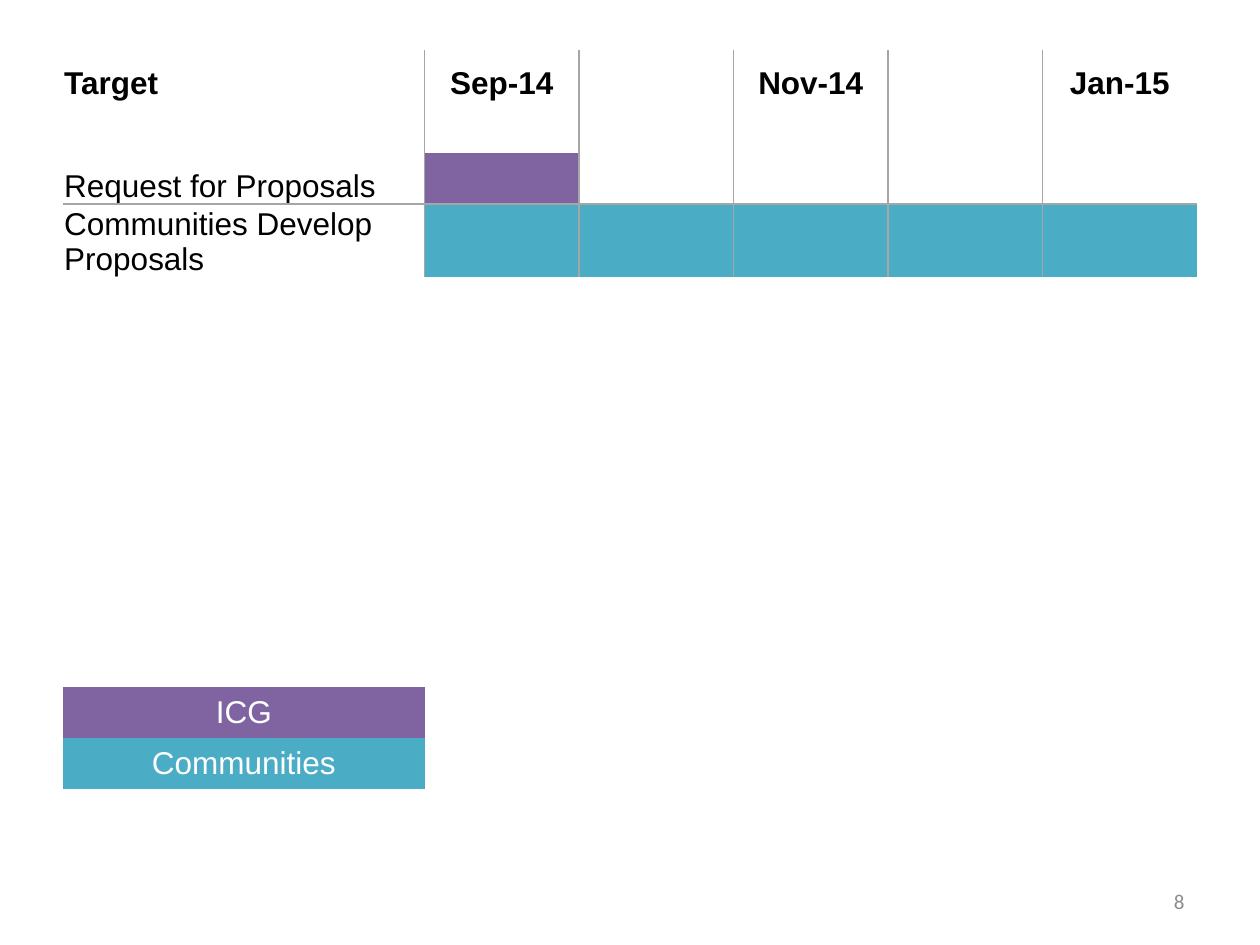
from lxml.etree import SubElement
from pptx import Presentation
from pptx.dml.color import RGBColor
from pptx.enum.text import MSO_ANCHOR, PP_ALIGN
from pptx.oxml.ns import qn
from pptx.util import Inches, Pt

COLORS = {"icg": "8064A2", "communities": "4BACC6", "rule": "A6A6A6",
          "ink": "000000", "on_bar": "FFFFFF", "page": "8C8C8C"}
ROWS, MONTHS = 15, 5
LABEL_WIDTH, MONTH_WIDTH, ROW_HEIGHT = 2.87, 1.226, 6.1 / 15
LEFT, TOP = 0.5, 0.4
HEADERS = {0: "Target", 1: "Sep-14", 3: "Nov-14", 5: "Jan-15"}
# row: label, owner, first month, last month
TASKS = {2: ("Request for Proposals", "icg", 1, 1),
         3: ("Communities Develop Proposals", "communities", 1, MONTHS)}
LEGEND = {12: ("ICG", "icg"), 13: ("Communities", "communities")}
LAST_TASK_ROW = max(TASKS)
RULED_ROW = min(TASKS)


def add_run(paragraph, text, size, font, color, bold=False):
    run = paragraph.add_run()
    run.text = text
    run.font.size = Pt(size)
    run.font.name = font
    run.font.bold = bold
    run.font.color.rgb = RGBColor.from_string(COLORS[color])


def set_borders(cell, ruled_sides):
    """Draw a 1 pt rule on the given sides (L, R, T, B) and clear the others."""
    properties = cell._tc.get_or_add_tcPr()
    for side in "LRTB":
        line = SubElement(properties, qn(f"a:ln{side}"), w=str(Pt(1)))
        if side in ruled_sides:
            fill = SubElement(line, qn("a:solidFill"))
            SubElement(fill, qn("a:srgbClr"), val=COLORS["rule"])
        else:
            SubElement(line, qn("a:noFill"))


def ruled_sides(row, column):
    sides = ""
    if row <= LAST_TASK_ROW:
        sides += "L" if column > 0 else ""
        sides += "R" if column < MONTHS else ""
    if row == RULED_ROW:
        sides += "B"
    if row == RULED_ROW + 1:
        sides += "T"
    return sides


def write_cell(cell, text, align=PP_ALIGN.LEFT, anchor=MSO_ANCHOR.BOTTOM,
               color="ink", bold=False):
    cell.vertical_anchor = anchor
    paragraph = cell.text_frame.paragraphs[0]
    paragraph.alignment = align
    add_run(paragraph, text, 18, "Arial", color, bold)


def fill_cell(cell, owner):
    cell.fill.solid()
    cell.fill.fore_color.rgb = RGBColor.from_string(COLORS[owner])


def add_schedule(slide):
    """Add the empty grid with its rules and return the table."""
    schedule = slide.shapes.add_table(
        ROWS, MONTHS + 1, Inches(LEFT), Inches(TOP),
        Inches(LABEL_WIDTH + MONTHS * MONTH_WIDTH),
        Inches(ROWS * ROW_HEIGHT)).table
    schedule.first_row = schedule.horz_banding = False
    for index, column in enumerate(schedule.columns):
        column.width = Inches(MONTH_WIDTH if index else LABEL_WIDTH)
    for row_index, row in enumerate(schedule.rows):
        row.height = Inches(ROW_HEIGHT)
        for column_index, cell in enumerate(row.cells):
            cell.margin_left = cell.margin_right = cell.margin_top = Inches(0.01)
            cell.margin_bottom = 0
            set_borders(cell, ruled_sides(row_index, column_index))
            cell.fill.background()
    return schedule


def fill_schedule(schedule):
    for column, heading in HEADERS.items():
        align = PP_ALIGN.CENTER if column else PP_ALIGN.LEFT
        write_cell(schedule.cell(0, column), heading, align, bold=True)
    for row, (task, owner, first, last) in TASKS.items():
        write_cell(schedule.cell(row, 0), task)
        for month in range(first, last + 1):
            fill_cell(schedule.cell(row, month), owner)
    # The task with a two-line label needs a taller row.
    schedule.rows[LAST_TASK_ROW].height = Inches(0.58)


def fill_legend(schedule):
    for row, (label, owner) in LEGEND.items():
        key = schedule.cell(row, 0)
        write_cell(key, label, PP_ALIGN.CENTER, MSO_ANCHOR.MIDDLE, "on_bar")
        fill_cell(key, owner)


def add_page_number(slide, number):
    page = slide.shapes.add_textbox(
        Inches(7.17), Inches(6.95), Inches(2.33), Inches(0.4)).text_frame
    page.word_wrap = True
    page.vertical_anchor = MSO_ANCHOR.MIDDLE
    page.paragraphs[0].alignment = PP_ALIGN.RIGHT
    add_run(page.paragraphs[0], number, 12, "Calibri", "page")


def main():
    deck = Presentation()
    deck.slide_width, deck.slide_height = Inches(10), Inches(7.5)
    slide = deck.slides.add_slide(deck.slide_layouts[6])
    schedule = add_schedule(slide)
    fill_schedule(schedule)
    fill_legend(schedule)
    add_page_number(slide, "8")
    deck.save("out.pptx")


if __name__ == "__main__":
    main()
